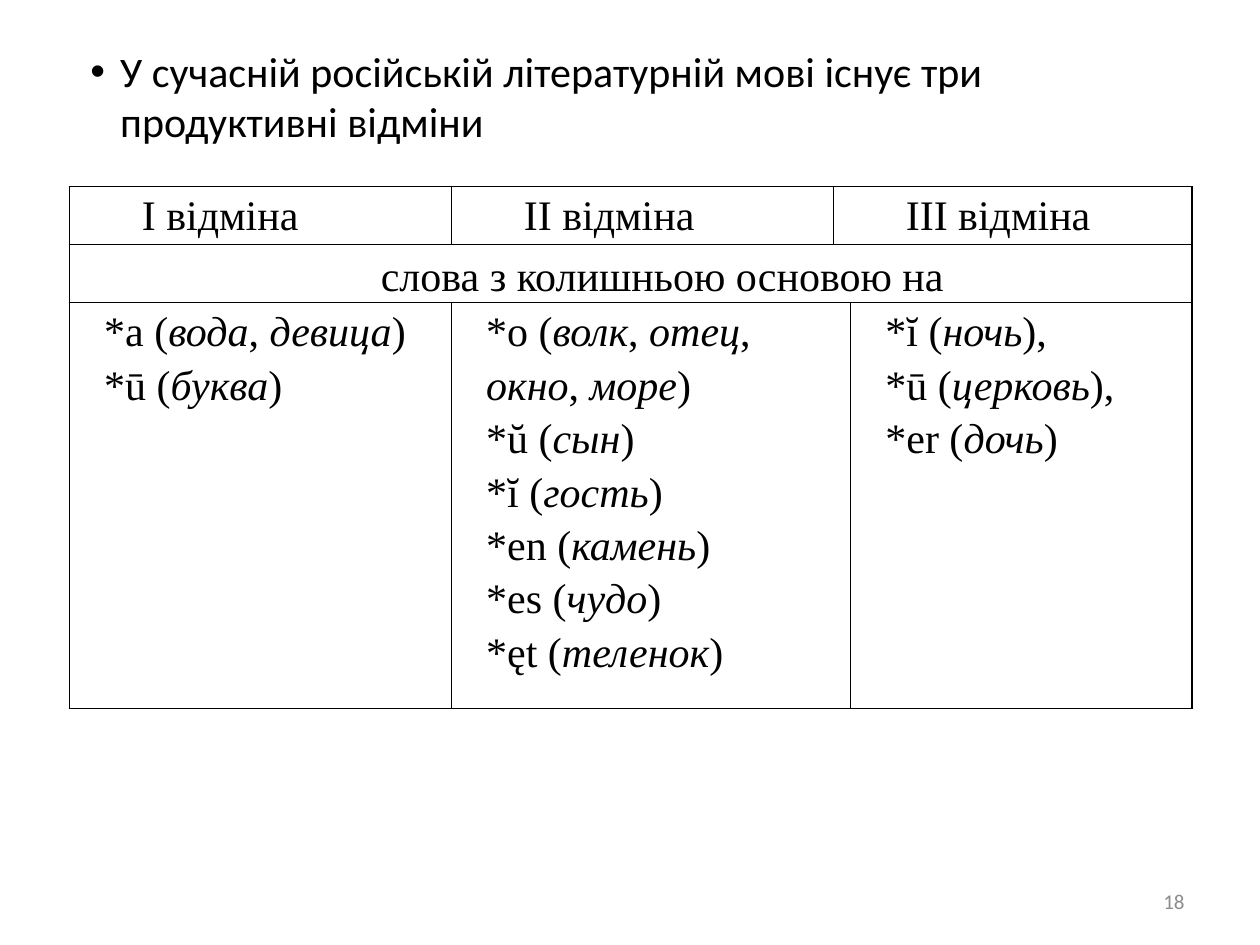
import pptx
import pptx.dml.color
import pptx.enum.text
import pptx.oxml.ns
import pptx.util
from lxml import etree

Cm = pptx.util.Cm
Pt = pptx.util.Pt
PP_ALIGN = pptx.enum.text.PP_ALIGN
MSO_ANCHOR = pptx.enum.text.MSO_ANCHOR
qn = pptx.oxml.ns.qn

COLORS = {"text": "000000", "border": "000000", "number": "8C8C8C"}
COL_WIDTHS = [7.7, 7.7, 0.35, 6.88]
ROW_HEIGHTS = [1.17, 1.17, 8.18]
HEADER_INDENT, BODY_INDENT = 1.27, 0.51

# Underscores enclose italic words.
HEADERS = {0: "І відміна", 1: "ІІ відміна", 2: "ІІІ відміна"}
STEMS = {
    0: ["*а (_вода_, _девица_)", "*ū (_буква_)"],
    1: ["*о (_волк_, _отец_, _окно_, _море_)", "*ŭ (_сын_)", "*ĭ (_гость_)",
        "*en (_камень_)", "*es (_чудо_)", "*ęt (_теленок_)"],
    3: ["*ĭ (_ночь_),", "*ū (_церковь_),", "*еr (_дочь_)"],
}


def format_run(r, size, font, color):
    r.font.size = Pt(size)
    r.font.name = font
    r.font.color.rgb = pptx.dml.color.RGBColor.from_string(COLORS[color])


def add_title(slide, text):
    sp = slide.shapes.title
    sp.left, sp.top, sp.width, sp.height = Cm(1.57), Cm(0.79), Cm(21.64), Cm(2.31)
    tf = sp.text_frame
    tf.text = text
    tf.vertical_anchor = MSO_ANCHOR.TOP
    p = tf.paragraphs[0]
    p.alignment = PP_ALIGN.LEFT
    pPr = p._p.get_or_add_pPr()
    etree.SubElement(pPr, qn("a:buFont"), typeface="Arial")
    etree.SubElement(pPr, qn("a:buChar"), char="•")
    format_run(p.runs[0], 24, "Calibri", "text")


def add_slide_number(slide, text):
    sp = slide.shapes.add_textbox(Cm(18.2), Cm(17.66), Cm(5.93), Cm(1.01))
    tf = sp.text_frame
    tf.word_wrap = True
    tf.vertical_anchor = MSO_ANCHOR.MIDDLE
    tf.text = text
    p = tf.paragraphs[0]
    p.alignment = PP_ALIGN.RIGHT
    format_run(p.runs[0], 12, "Calibri", "number")


def style_cell(cell):
    cell.margin_left = cell.margin_right = Cm(0.19)
    cell.margin_top = cell.margin_bottom = 0
    tcPr = cell._tc.get_or_add_tcPr()
    for side in ("lnL", "lnR", "lnT", "lnB"):
        ln = etree.SubElement(tcPr, qn(f"a:{side}"), w=str(Pt(1)))
        fill = etree.SubElement(ln, qn("a:solidFill"))
        etree.SubElement(fill, qn("a:srgbClr"), val=COLORS["border"])
    cell.fill.background()


def fill_cell(cell, lines, indent, align=PP_ALIGN.LEFT):
    tf = cell.text_frame
    for i, line in enumerate(lines):
        p = tf.add_paragraph() if i else tf.paragraphs[0]
        p.alignment = align
        p.line_spacing = 1.15
        p._p.get_or_add_pPr().set("marL", str(Cm(indent)))
        for j, part in enumerate(line.split("_")):
            r = p.add_run()
            r.text = part
            format_run(r, 24, "Times New Roman", "text")
            r.font.italic = j % 2 == 1


def add_declension_table(slide):
    frame = slide.shapes.add_table(
        len(ROW_HEIGHTS), len(COL_WIDTHS), Cm(1.4), Cm(3.76),
        Cm(sum(COL_WIDTHS)), Cm(sum(ROW_HEIGHTS)))
    table = frame.table
    table.first_row = table.horz_banding = False
    for col, width in zip(table.columns, COL_WIDTHS):
        col.width = Cm(width)
    for row, height in zip(table.rows, ROW_HEIGHTS):
        row.height = Cm(height)
    for cell in table.iter_cells():
        style_cell(cell)
    for row, first, last in ((0, 2, 3), (1, 0, 3), (2, 1, 2)):
        table.cell(row, first).merge(table.cell(row, last))

    for col, text in HEADERS.items():
        fill_cell(table.cell(0, col), [text], HEADER_INDENT)
    subtitle = table.cell(1, 0)
    subtitle.vertical_anchor = MSO_ANCHOR.MIDDLE
    fill_cell(subtitle, ["слова з колишньою основою на"], HEADER_INDENT,
              PP_ALIGN.CENTER)
    for col, lines in STEMS.items():
        fill_cell(table.cell(2, col), lines, BODY_INDENT)


def main():
    prs = pptx.Presentation()
    prs.slide_width, prs.slide_height = Cm(25.4), Cm(19.05)
    slide = prs.slides.add_slide(prs.slide_layouts.get_by_name("Title Only"))
    add_slide_number(slide, "18")
    add_title(slide, "У сучасній російській літературній мові існує три "
                     "продуктивні відміни")
    add_declension_table(slide)
    prs.save("out.pptx")


if __name__ == "__main__":
    main()
